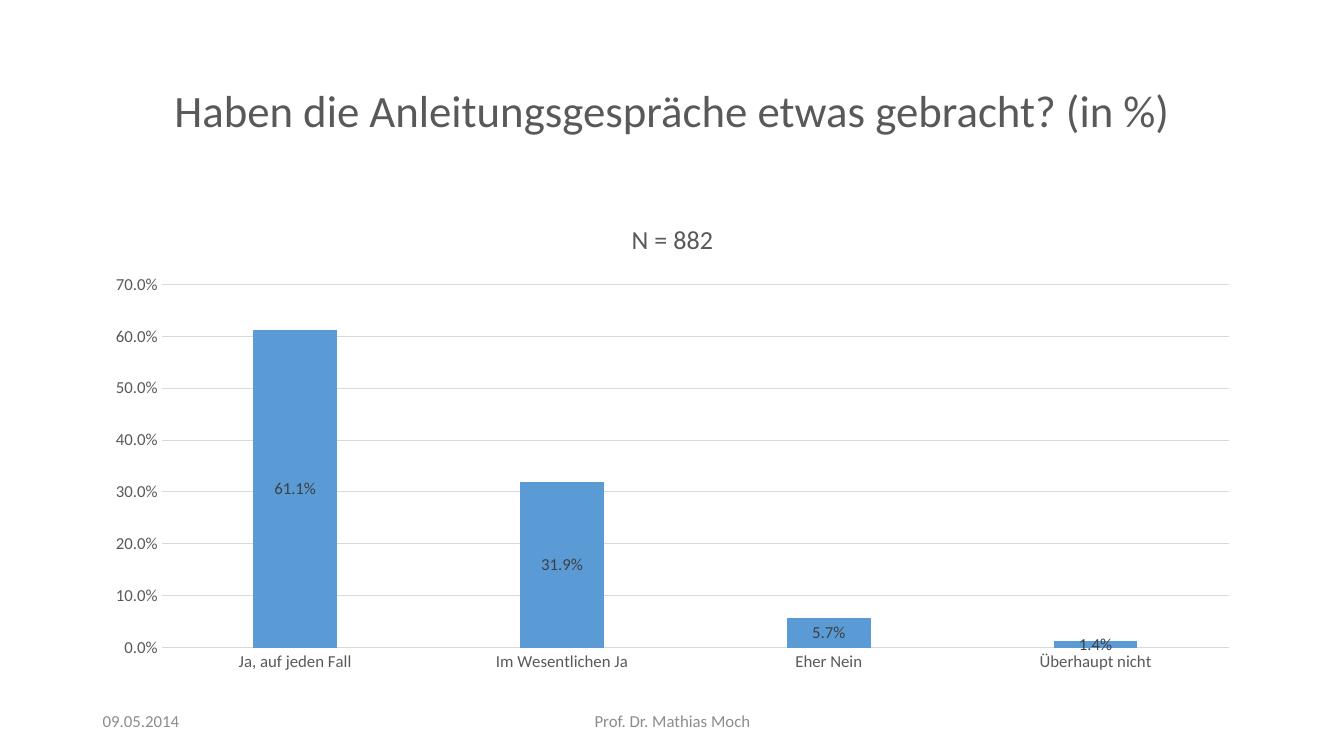
from pptx import Presentation
from pptx.chart.data import CategoryChartData
from pptx.dml.color import RGBColor
from pptx.enum.chart import XL_CHART_TYPE, XL_LABEL_POSITION, XL_TICK_MARK
from pptx.enum.text import MSO_ANCHOR, PP_ALIGN
from pptx.util import Inches, Pt

COLUMNS = XL_CHART_TYPE.COLUMN_CLUSTERED
LABEL_CENTER = XL_LABEL_POSITION.CENTER
NO_TICK = XL_TICK_MARK.NONE
MIDDLE = MSO_ANCHOR.MIDDLE
LEFT, CENTER = PP_ALIGN.LEFT, PP_ALIGN.CENTER

FONT = "Calibri"
DARK, GRAY, GRID, BLUE, LABEL = "595959", "8C8C8C", "D9D9D9", "5B9BD5", "404040"
PERCENT = "0.0%"

# text, (left, top, width, height), size, colour, alignment, line spacing
TEXTS = [
    ("Haben die Anleitungsgespräche etwas gebracht? (in %)",
     (0.92, 0.4, 11.5, 1.45), 32, DARK, CENTER, 0.9),
    ("09.05.2014", (0.92, 6.95, 3, 0.4), 12, GRAY, LEFT, 1.0),
    ("Prof. Dr. Mathias Moch", (4.42, 6.95, 4.5, 0.4), 12, GRAY, CENTER, 1.0),
]
CHART_BOX = (0.92, 2, 11.5, 4.76)
CHART_TITLE = "N = 882"
ANSWERS = {
    "Ja, auf jeden Fall": 0.611,
    "Im Wesentlichen Ja": 0.319,
    "Eher Nein": 0.057,
    "Überhaupt nicht": 0.014,
}


def color(hex_value):
    return RGBColor.from_string(hex_value)


def set_font(font, size, hex_value):
    for name, value in {"name": FONT, "size": Pt(size), "bold": False}.items():
        setattr(font, name, value)
    font.color.rgb = color(hex_value)


def set_line(line, hex_value):
    line.color.rgb = color(hex_value)
    line.width = Pt(0.75)


def add_text(slide, text, box, size, hex_value, alignment, spacing):
    frame = slide.shapes.add_textbox(*map(Inches, box)).text_frame
    frame.word_wrap = True
    frame.vertical_anchor = MIDDLE
    paragraph = frame.paragraphs[0]
    paragraph.text = text
    paragraph.alignment = alignment
    paragraph.line_spacing = spacing
    set_font(paragraph.runs[0].font, size, hex_value)


def add_answer_chart(slide):
    data = CategoryChartData(number_format=PERCENT)
    data.categories = list(ANSWERS)
    data.add_series("Series 1", list(ANSWERS.values()))
    chart = slide.shapes.add_chart(COLUMNS, *map(Inches, CHART_BOX), data).chart
    set_font(chart.font, 10, "000000")
    chart.has_legend = False
    chart.has_title = True
    title = chart.chart_title.text_frame
    title.text = CHART_TITLE
    set_font(title.paragraphs[0].runs[0].font, 18.6, DARK)

    for axis in (chart.category_axis, chart.value_axis):
        axis.major_tick_mark = axis.minor_tick_mark = NO_TICK
        set_font(axis.tick_labels.font, 12, DARK)
    set_line(chart.category_axis.format.line, GRID)
    value_axis = chart.value_axis
    value_axis.minimum_scale, value_axis.maximum_scale = 0, 0.7
    value_axis.major_unit = 0.1
    value_axis.format.line.fill.background()
    set_line(value_axis.major_gridlines.format.line, GRID)

    plot = chart.plots[0]
    plot.gap_width, plot.overlap = 219, -27
    plot.vary_by_categories = False
    series = plot.series[0]
    series.format.fill.solid()
    series.format.fill.fore_color.rgb = color(BLUE)
    labels = series.data_labels
    labels.show_value = True
    labels.position = LABEL_CENTER
    for part in (labels, value_axis.tick_labels):
        part.number_format = PERCENT
        part.number_format_is_linked = False
    set_font(labels.font, 12, LABEL)


def main():
    presentation = Presentation()
    presentation.slide_width = Inches(13.33)
    presentation.slide_height = Inches(7.5)
    slide = presentation.slides.add_slide(presentation.slide_layouts[6])
    for entry in TEXTS:
        add_text(slide, *entry)
    add_answer_chart(slide)
    presentation.save("out.pptx")


if __name__ == "__main__":
    main()
